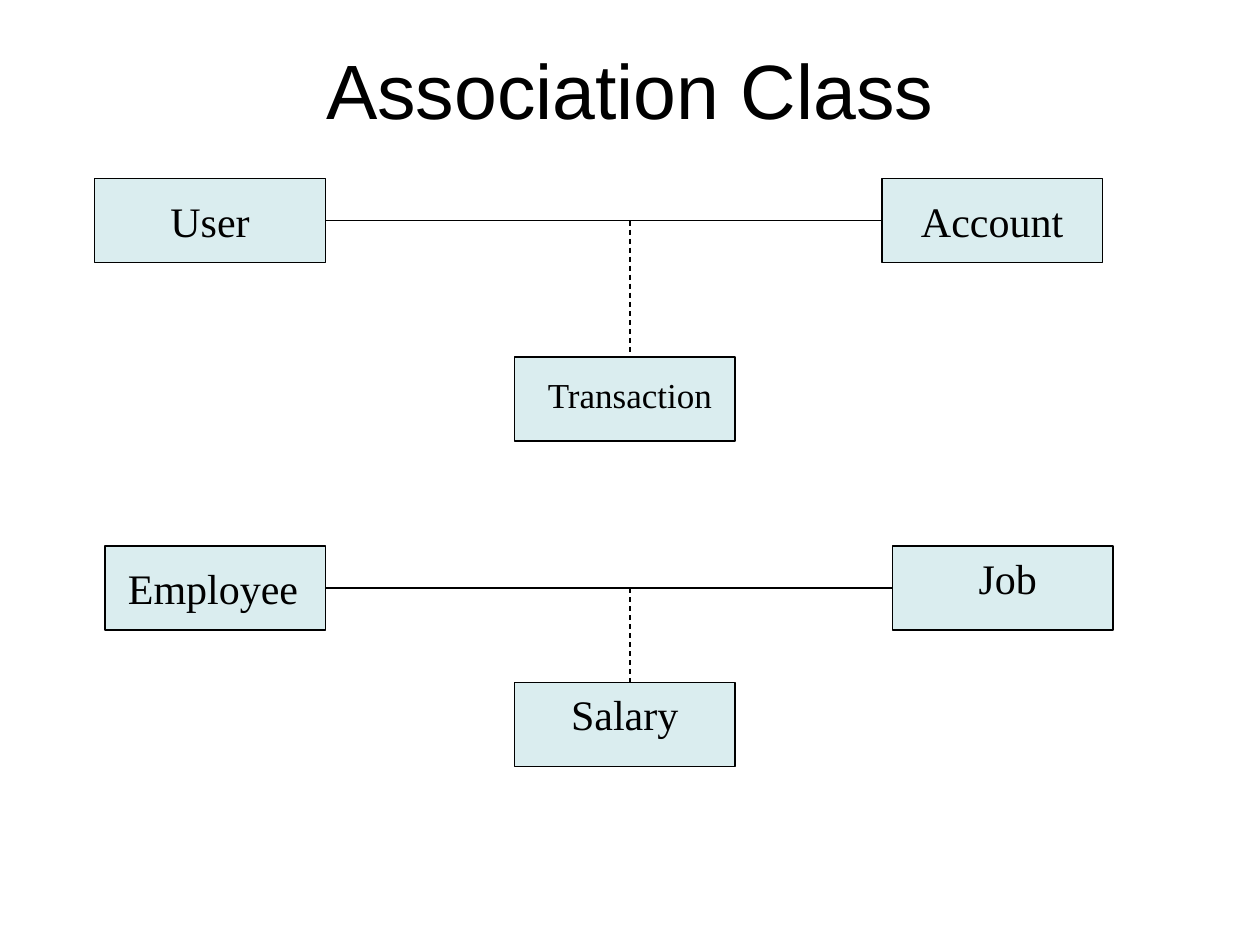
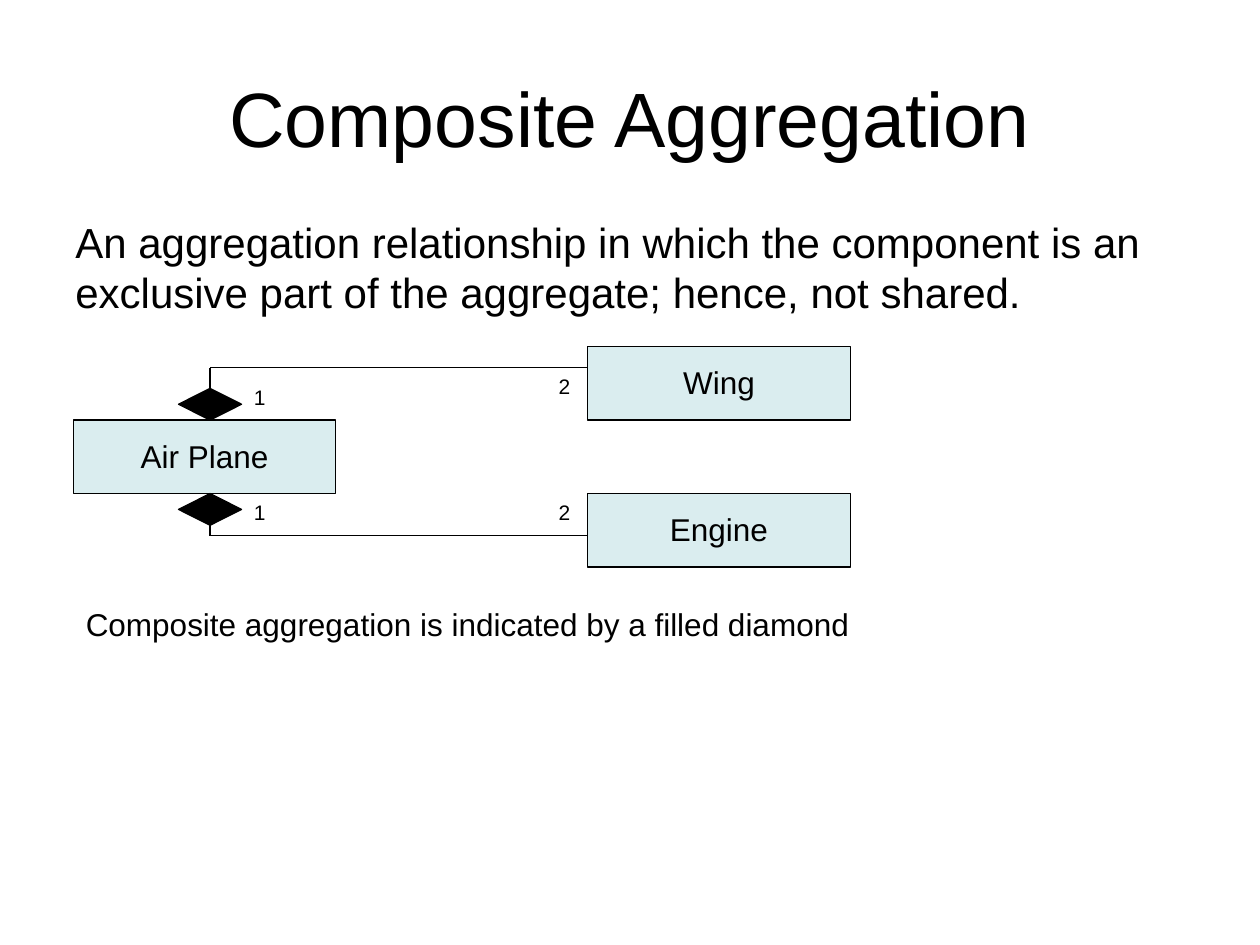
"""Build two UML slides: association classes and composite aggregation."""
from dataclasses import dataclass

import lxml.etree
import pptx
import pptx.dml.color
import pptx.enum.dml
import pptx.enum.shapes
import pptx.enum.text
import pptx.oxml.ns
import pptx.util

Cm = pptx.util.Cm
Pt = pptx.util.Pt
RGB = pptx.dml.color.RGBColor
qn = pptx.oxml.ns.qn
SHAPE = pptx.enum.shapes.MSO_SHAPE
ALIGN = pptx.enum.text.PP_ALIGN
FIT = pptx.enum.text.MSO_AUTO_SIZE


@dataclass(frozen=True)
class Theme:
    ink: RGB = RGB(0, 0, 0)
    box: RGB = RGB(0xDA, 0xED, 0xEF)
    sans: str = "Arial"
    serif: str = "Times New Roman"
    title: int = 44
    body: int = 24
    medium: int = 20
    small: int = 18
    count: int = 12
    line: float = 0.75


T = Theme()
PAD = 0.21
CLASS_W, CLASS_H = 4.45, 1.69
PART_W, PART_H = 5.29, 1.48
LINK_X = 12.7
DIAMOND_W, DIAMOND_H = 1.27, 0.64

# name, box left, box width, label offset x, label offset y, label width, size, alignment
ASSOCIATIONS = [
    {
        "top": 3.6, "link_top": 7.2,
        "left": ("User", 1.91, 4.66, PAD, PAD, 4.23, T.body, ALIGN.CENTER),
        "right": ("Account", 17.78, CLASS_W, PAD, PAD, 4.02, T.body, ALIGN.CENTER),
        "link": ("Transaction", 10.37, CLASS_W, 0, PAD, 4.66, T.medium, ALIGN.CENTER),
    },
    {
        "top": 11.01, "link_top": 13.76,
        "left": ("Employee", 2.12, CLASS_W, PAD, PAD, 4.23, T.body, ALIGN.LEFT),
        "right": ("Job", 17.99, CLASS_W, PAD, 0, 4.23, T.body, ALIGN.CENTER),
        "link": ("Salary", 10.37, CLASS_W, 0, 0, 4.45, T.body, ALIGN.CENTER),
    },
]
DEFINITION = ("An aggregation relationship in which the component is an "
              "exclusive part of the aggregate; hence, not shared.")
NOTE = "Composite aggregation is indicated by a filled diamond"
PARTS = [("Air Plane", 1.48, 8.47), ("Wing", 11.85, 6.99), ("Engine", 11.85, 9.95)]
COMPOSITIONS = [
    {"diamond_top": 7.83, "tip": 7.83, "line_y": 7.41,
     "counts": [("1", 4.87, 7.62, 0.85), ("2", 11.01, 7.41, 0.85)]},
    {"diamond_top": 9.95, "tip": 10.59, "line_y": 10.8,
     "counts": [("1", 4.87, 9.95, 0.64), ("2", 11.01, 9.95, 1.06)]},
]


def add_run(p, text, size, font):
    r = p.add_run()
    r.text = text
    r.font.size, r.font.name = Pt(size), font
    r.font.color.rgb = T.ink


def add_slide(prs, title, *place):
    s = prs.slides.add_slide(prs.slide_layouts[5])
    sp = s.shapes.title
    sp.left, sp.top, sp.width, sp.height = map(Cm, place)
    tf = sp.text_frame
    tf.word_wrap, tf.auto_size = True, FIT.NONE
    tf.vertical_anchor = pptx.enum.text.MSO_ANCHOR.MIDDLE
    p = tf.paragraphs[0]
    p.alignment = ALIGN.CENTER
    add_run(p, title, T.title, T.sans)
    return s


def add_text(s, text, x, y, w, h, size, font=T.sans, align=ALIGN.LEFT):
    tf = s.shapes.add_textbox(Cm(x), Cm(y), Cm(w), Cm(h)).text_frame
    tf.word_wrap, tf.auto_size = True, FIT.SHAPE_TO_FIT_TEXT
    p = tf.paragraphs[0]
    p.alignment = align
    before = lxml.etree.SubElement(p._p.get_or_add_pPr(), qn("a:spcBef"))
    lxml.etree.SubElement(before, qn("a:spcPct"), val="50000")
    add_run(p, text, size, font)


def add_shape(s, kind, x, y, w, h, fill):
    sp = s.shapes.add_shape(kind, Cm(x), Cm(y), Cm(w), Cm(h))
    sp.shadow.inherit = False
    sp.fill.solid()
    sp.fill.fore_color.rgb = fill
    sp.line.color.rgb, sp.line.width = T.ink, Pt(T.line)


def add_line(s, x1, y1, x2, y2, dashed=False):
    kind = pptx.enum.shapes.MSO_CONNECTOR.STRAIGHT
    sp = s.shapes.add_connector(kind, Cm(x1), Cm(y1), Cm(x2), Cm(y2))
    sp.line.color.rgb, sp.line.width = T.ink, Pt(T.line)
    if dashed:
        sp.line.dash_style = pptx.enum.dml.MSO_LINE.DASH
    lxml.etree.SubElement(sp._element.spPr, qn("a:effectLst"))


def add_class(s, top, name, x, w, dx, dy, label_w, size, align):
    add_shape(s, SHAPE.RECTANGLE, x, top, w, CLASS_H, T.box)
    label_h = 1.27 if size == T.body else 1.09
    add_text(s, name, x + dx, top + dy, label_w, label_h, size, T.serif, align)


def build_association(prs):
    s = add_slide(prs, "Association Class", 1.91, 0.84, 21.59, 1.91)
    for a in ASSOCIATIONS:
        mid = a["top"] + CLASS_H / 2
        for side, top in (("left", a["top"]), ("right", a["top"]), ("link", a["link_top"])):
            add_class(s, top, *a[side])
        add_line(s, a["left"][1] + a["left"][2], mid, a["right"][1], mid)
        add_line(s, LINK_X, mid, LINK_X, a["link_top"], dashed=True)


def build_composite(prs):
    s = add_slide(prs, "Composite Aggregation", 1.27, 0.76, 22.86, 3.18)
    add_text(s, DEFINITION, 1.27, 4.23, 22.86, 2.29, T.body)
    for name, x, y in PARTS:
        add_shape(s, SHAPE.RECTANGLE, x, y, PART_W, PART_H, T.box)
        add_text(s, name, x + PAD, y + PAD, PART_W - 2 * PAD, 1.02, T.small, align=ALIGN.CENTER)
    diamond_x, part_x = 3.6, PARTS[1][1]
    axis = diamond_x + DIAMOND_W / 2
    for c in COMPOSITIONS:
        add_shape(s, SHAPE.DIAMOND, diamond_x, c["diamond_top"], DIAMOND_W, DIAMOND_H, T.ink)
        add_line(s, axis, c["tip"], axis, c["line_y"])
        add_line(s, axis, c["line_y"], part_x, c["line_y"])
        for text, x, y, w in c["counts"]:
            add_text(s, text, x, y, w, 0.76, T.count)
    add_text(s, NOTE, 1.48, 12.07, 16.3, 1.02, T.small)


def main():
    prs = pptx.Presentation()
    prs.slide_width, prs.slide_height = Cm(25.4), Cm(19.05)
    build_association(prs)
    build_composite(prs)
    prs.save("out.pptx")


if __name__ == "__main__":
    main()
